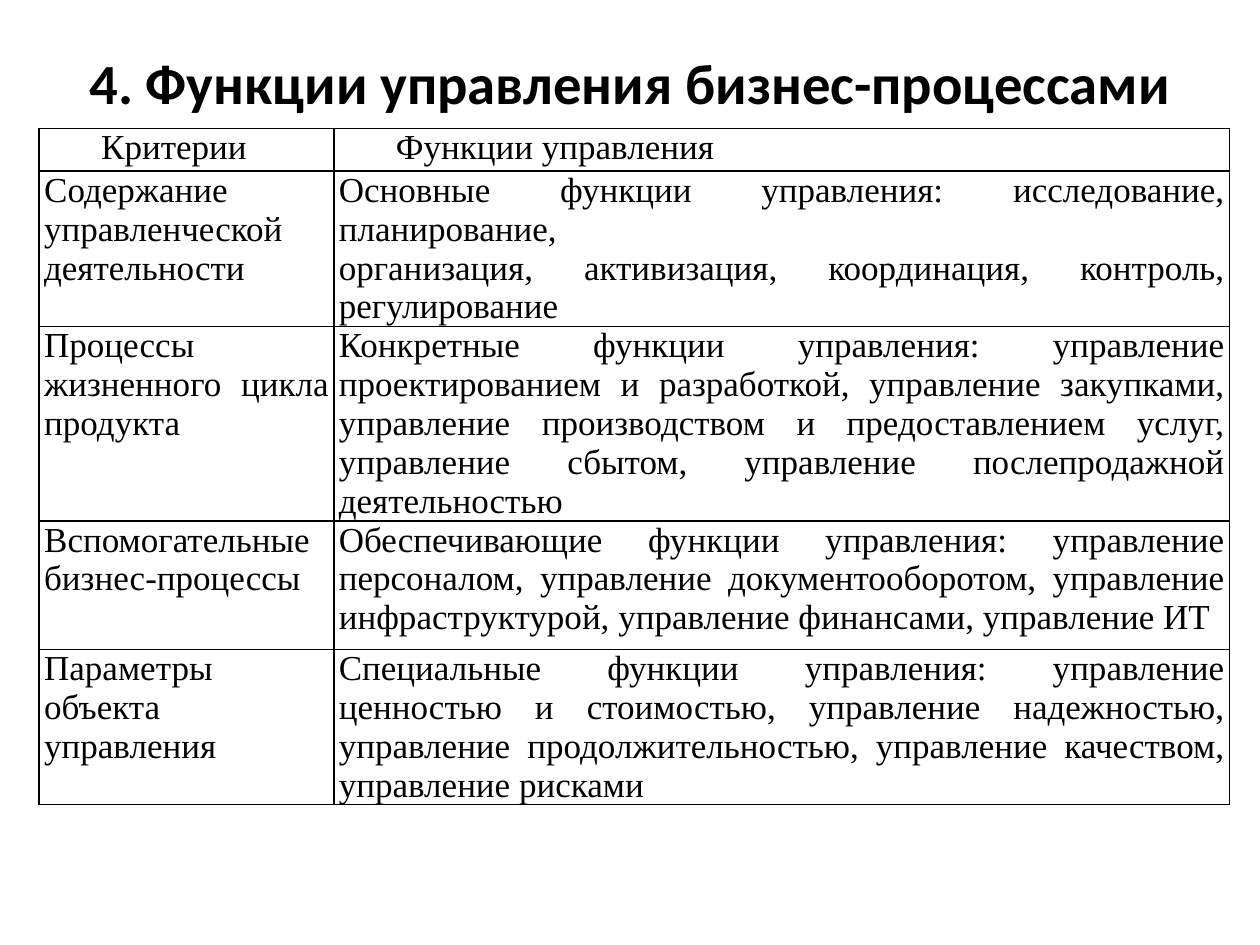
from dataclasses import dataclass

from lxml import etree
from pptx import Presentation
from pptx.dml.color import RGBColor
from pptx.enum.text import MSO_ANCHOR, MSO_AUTO_SIZE, PP_ALIGN
from pptx.oxml.ns import qn
from pptx.util import Cm, Pt

CENTER, JUSTIFY = PP_ALIGN.CENTER, PP_ALIGN.JUSTIFY
MIDDLE = MSO_ANCHOR.MIDDLE
NO_AUTOFIT = MSO_AUTO_SIZE.NONE
TITLE_ONLY = 5


@dataclass(frozen=True)
class Theme:
    ink: str = "000000"
    title_font: str = "Calibri"
    table_font: str = "Times New Roman"
    title_size: float = 32.4
    table_size: float = 20
    border_width: float = 1
    header_indent: float = 1.25
    body_margin: float = 0.1


HEADER = ("Критерии", "Функции управления")
FUNCTIONS = [
    ("Содержание\nуправленческой деятельности",
     "Основные функции управления: исследование, планирование,\n"
     "организация, активизация, координация, контроль, регулирование"),
    ("Процессы жизненного цикла продукта",
     "Конкретные функции управления: управление проектированием и разработкой, "
     "управление закупками, управление производством и предоставлением услуг, "
     "управление сбытом, управление послепродажной деятельностью"),
    ("Вспомогательные бизнес-процессы",
     "Обеспечивающие функции управления: управление персоналом, управление "
     "документооборотом, управление инфраструктурой, управление финансами, "
     "управление ИТ"),
    ("Параметры объекта управления",
     "Специальные функции управления: управление ценностью и стоимостью, "
     "управление надежностью, управление продолжительностью, управление "
     "качеством, управление рисками"),
]
COLUMN_WIDTHS = (5.94, 18.06)
ROW_HEIGHTS = (0.86, 2.59, 3.45, 2.59, 2.59)


class SlideBuilder:
    def __init__(self, page, theme):
        self.page = page
        self.theme = theme

    def add_span(self, para, text, font, size, bold=False):
        span = para.add_run()
        span.text = text
        span.font.name = font
        span.font.size = Pt(size)
        span.font.bold = bold
        span.font.color.rgb = RGBColor.from_string(self.theme.ink)

    def title(self, text, left, top, width, height, bottom_inset):
        box = self.page.shapes.title
        box.left, box.top, box.width, box.height = map(Cm, (left, top, width, height))
        frame = box.text_frame
        frame.word_wrap = True
        frame.auto_size = NO_AUTOFIT
        frame.vertical_anchor = MIDDLE
        frame.margin_bottom = Cm(bottom_inset)
        para = frame.paragraphs[0]
        para.alignment = CENTER
        self.add_span(para, text, self.theme.title_font, self.theme.title_size, bold=True)

    def table(self, rows, left, top, height, column_widths, row_heights):
        frame = self.page.shapes.add_table(
            len(rows), len(column_widths), Cm(left), Cm(top),
            Cm(sum(column_widths)), Cm(height))
        table = frame.table
        table.first_row = False
        table.horz_banding = False
        for column, width in zip(table.columns, column_widths):
            column.width = Cm(width)
        for row, row_height in zip(table.rows, row_heights):
            row.height = Cm(row_height)
        frame.height = Cm(height)
        for row_index, texts in enumerate(rows):
            for column_index, text in enumerate(texts):
                self.cell(table.cell(row_index, column_index), text, row_index == 0)

    def cell(self, cell, text, is_header):
        cell.margin_left = cell.margin_right = cell.margin_top = cell.margin_bottom = 0
        self.borders(cell)
        cell.fill.background()
        for index, line in enumerate(text.split("\n")):
            frame = cell.text_frame
            para = frame.add_paragraph() if index else frame.paragraphs[0]
            para.alignment = JUSTIFY
            self.indents(para, is_header)
            self.add_span(para, line, self.theme.table_font, self.theme.table_size)

    def indents(self, para, is_header):
        """Indent the first line of a header; give body text side margins."""
        first_line = self.theme.header_indent if is_header else 0
        margin = 0 if is_header else self.theme.body_margin
        properties = para._p.get_or_add_pPr()
        for name, value in (("marL", margin), ("marR", margin), ("indent", first_line)):
            properties.set(name, str(Cm(value)))

    def borders(self, cell):
        properties = cell._tc.get_or_add_tcPr()
        for side in ("a:lnL", "a:lnR", "a:lnT", "a:lnB"):
            line = etree.SubElement(properties, qn(side), w=str(Pt(self.theme.border_width)))
            fill = etree.SubElement(line, qn("a:solidFill"))
            etree.SubElement(fill, qn("a:srgbClr"), val=self.theme.ink)


def main():
    deck = Presentation()
    deck.slide_width, deck.slide_height = Cm(25.4), Cm(19.05)
    page = deck.slides.add_slide(deck.slide_layouts[TITLE_ONLY])
    builder = SlideBuilder(page, Theme())
    builder.title("4. Функции управления бизнес-процессами",
                  left=1.27, top=0.76, width=22.86, height=3.18, bottom_inset=1.52)
    builder.table([HEADER, *FUNCTIONS], left=0.79, top=2.59, height=14.48,
                  column_widths=COLUMN_WIDTHS, row_heights=ROW_HEIGHTS)
    deck.save("out.pptx")


if __name__ == "__main__":
    main()
